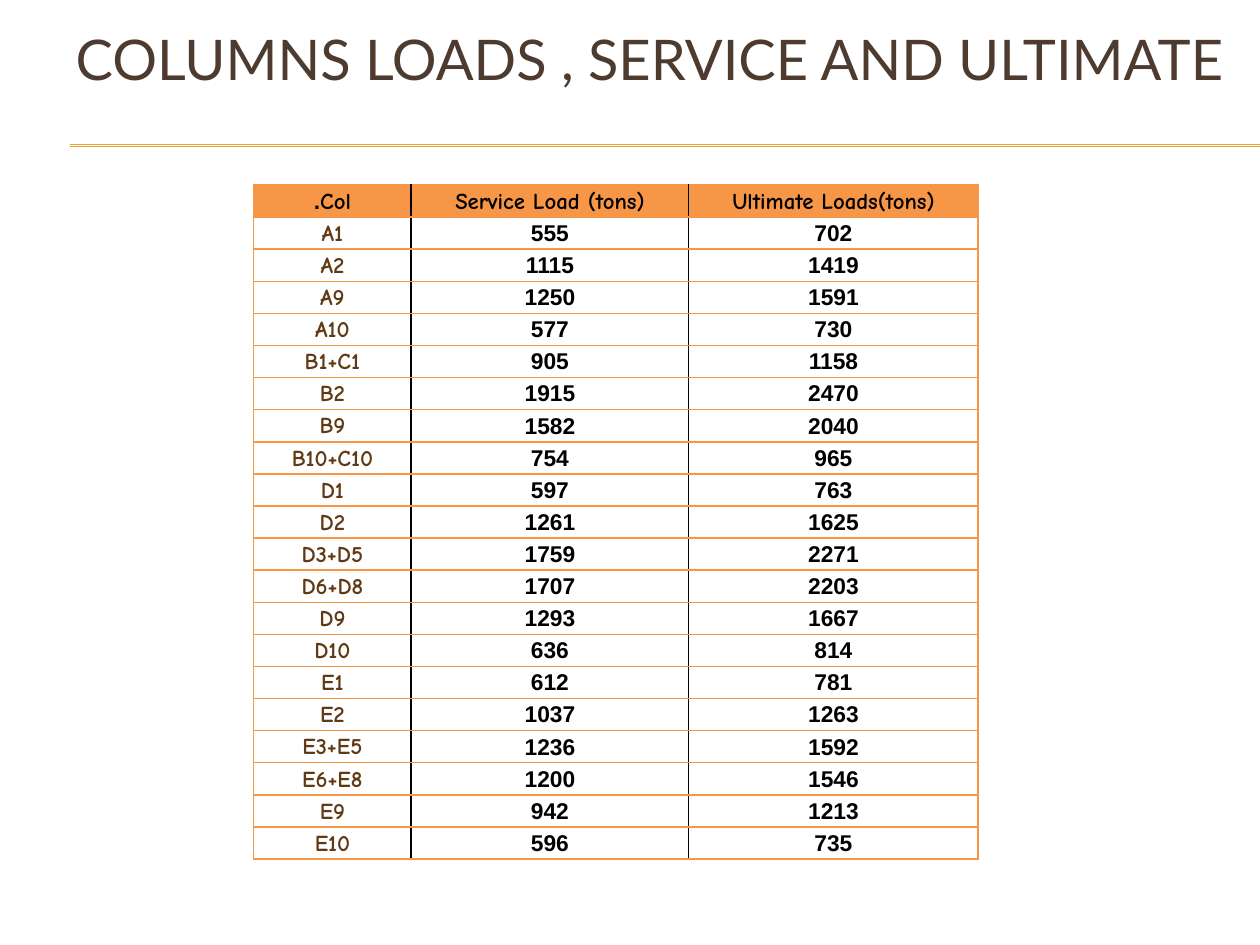
from dataclasses import dataclass

from lxml.etree import SubElement
from pptx import Presentation
from pptx.dml.color import RGBColor
from pptx.enum.shapes import MSO_CONNECTOR
from pptx.enum.text import MSO_ANCHOR, MSO_AUTO_SIZE, PP_ALIGN
from pptx.oxml.ns import qn
from pptx.util import Cm, Pt

HUES = {
    "title": "4E3B30",
    "rule": "F0A22E",
    "grid": "F79646",
    "name": "603A14",
    "ink": "000000",
}
WIDTHS = (3.18, 5.59, 5.84)
HEIGHT = 13.59
HEADS = ("Col.", "Service Load (tons)", "Ultimate Loads(tons)")


@dataclass
class Load:
    name: str
    service: int
    ultimate: int


LOADS = [
    Load("A1", 555, 702),
    Load("A2", 1115, 1419),
    Load("A9", 1250, 1591),
    Load("A10", 577, 730),
    Load("B1+C1", 905, 1158),
    Load("B2", 1915, 2470),
    Load("B9", 1582, 2040),
    Load("B10+C10", 754, 965),
    Load("D1", 597, 763),
    Load("D2", 1261, 1625),
    Load("D3+D5", 1759, 2271),
    Load("D6+D8", 1707, 2203),
    Load("D9", 1293, 1667),
    Load("D10", 636, 814),
    Load("E1", 612, 781),
    Load("E2", 1037, 1263),
    Load("E3+E5", 1236, 1592),
    Load("E6+E8", 1200, 1546),
    Load("E9", 942, 1213),
    Load("E10", 596, 735),
]


def style(para, font: str, size: int, hue: str, bold: bool, align) -> None:
    para.alignment = align
    para._p.get_or_add_pPr().set("rtl", "1")
    for run in para.runs:
        run.font.name = font
        run.font.size = Pt(size)
        run.font.bold = bold
        run.font.color.rgb = RGBColor.from_string(HUES[hue])
        SubElement(run._r.get_or_add_rPr(), qn("a:cs"), typeface="Arial")


def add_title(slide, text: str) -> None:
    title = slide.shapes.title
    title.left, title.top = Cm(1.27), Cm(0)
    title.width, title.height = Cm(24.13), Cm(2.34)
    frame = title.text_frame
    frame.text = text
    frame.auto_size = MSO_AUTO_SIZE.NONE
    frame.vertical_anchor = MSO_ANCHOR.MIDDLE
    style(frame.paragraphs[0], "Lato", 32, "title", False, PP_ALIGN.LEFT)


def add_rule(slide, y: float) -> None:
    rule = slide.shapes.add_connector(
        MSO_CONNECTOR.STRAIGHT, Cm(1.42), Cm(y), Cm(25.4), Cm(y))
    rule.line.color.rgb = RGBColor.from_string(HUES["rule"])
    rule.line.width = Pt(0.75)
    SubElement(rule._element.spPr, qn("a:effectLst"))


def add_edge(cell, side: str, hue: str) -> None:
    edge = SubElement(cell._tc.get_or_add_tcPr(), qn(f"a:ln{side}"), w=str(Pt(1)))
    fill = SubElement(edge, qn("a:solidFill"))
    SubElement(fill, qn("a:srgbClr"), val=HUES[hue])


def fill_cell(cell, text: str, head: bool, col: int) -> None:
    last = len(WIDTHS) - 1
    cell.margin_left = cell.margin_right = Cm(0.15)
    cell.margin_top = cell.margin_bottom = Cm(0)
    cell.text_frame.text = text
    para = cell.text_frame.paragraphs[0]
    hue = "name" if col == 0 and not head else "ink"
    style(para, "Comic Neue", 13, hue, True, PP_ALIGN.CENTER)
    para.line_spacing = 1.15
    add_edge(cell, "L", "grid" if col == 0 else "ink")
    add_edge(cell, "R", "grid" if col == last else "ink")
    add_edge(cell, "T", "grid")
    add_edge(cell, "B", "grid")
    if head:
        cell.fill.solid()
        cell.fill.fore_color.rgb = RGBColor.from_string(HUES["grid"])
    else:
        cell.fill.background()


def add_loads(slide, loads: list[Load]) -> None:
    rows = [HEADS] + [(x.name, str(x.service), str(x.ultimate)) for x in loads]
    table = slide.shapes.add_table(
        len(rows), len(WIDTHS), Cm(5.11), Cm(3.73),
        Cm(sum(WIDTHS)), Cm(HEIGHT)).table
    table.first_row = table.horz_banding = False
    for col, width in zip(table.columns, WIDTHS):
        col.width = Cm(width)
    for r, row in enumerate(rows):
        table.rows[r].height = Cm(HEIGHT / len(rows))
        for c, text in enumerate(row):
            fill_cell(table.cell(r, c), text, r == 0, c)


def main() -> None:
    deck = Presentation()
    deck.slide_width, deck.slide_height = Cm(25.4), Cm(19.05)
    slide = deck.slides.add_slide(deck.slide_layouts[5])
    for y in (2.92, 2.95):
        add_rule(slide, y)
    add_title(slide, "COLUMNS LOADS , SERVICE AND ULTIMATE")
    add_loads(slide, LOADS)
    deck.save("out.pptx")


if __name__ == "__main__":
    main()
